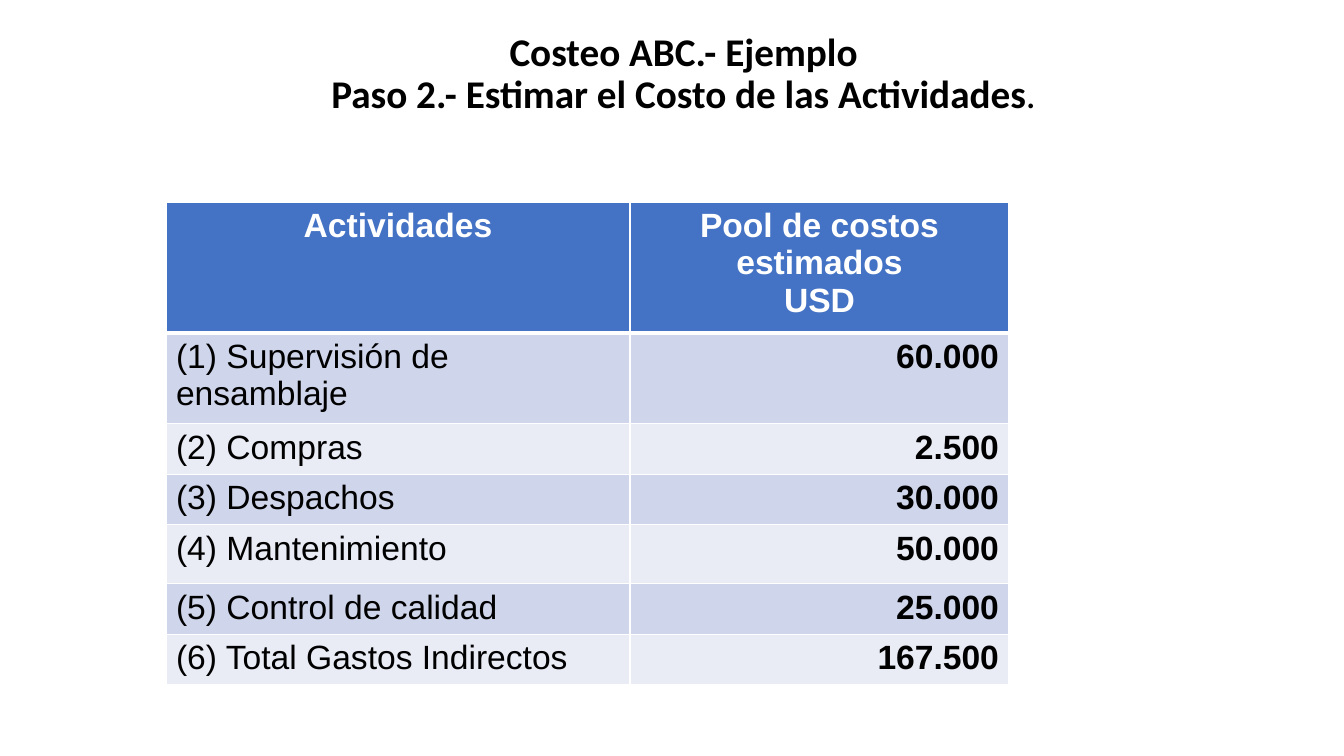
from lxml import etree
from pptx import Presentation
from pptx.dml.color import RGBColor
from pptx.enum.text import MSO_ANCHOR, PP_ALIGN
from pptx.oxml.ns import qn
from pptx.util import Emu, Pt

CENTER, LEFT, RIGHT = PP_ALIGN.CENTER, PP_ALIGN.LEFT, PP_ALIGN.RIGHT
MIDDLE = MSO_ANCHOR.MIDDLE

BLACK = RGBColor(0x00, 0x00, 0x00)
WHITE = RGBColor(0xFF, 0xFF, 0xFF)
HEADER_BLUE = RGBColor(0x44, 0x72, 0xC4)
BANDS = (RGBColor(0xE9, 0xEB, 0xF5), RGBColor(0xCF, 0xD5, 0xEA))

EMU_PER_PX = 914400 / 100.8
THIN, THICK = 1, 3

COLUMN_WIDTHS = (464, 379)
ROW_HEIGHTS = (122, 84, 47, 47, 59, 47, 47)
COSTS = (
    ("Actividades", "Pool de costos estimados\nUSD"),
    ("(1) Supervisión de ensamblaje", "60.000"),
    ("(2) Compras", "2.500"),
    ("(3) Despachos", "30.000"),
    ("(4) Mantenimiento", "50.000"),
    ("(5) Control de calidad", "25.000"),
    ("(6) Total Gastos Indirectos", "167.500"),
)


def px(length):
    return Emu(round(length * EMU_PER_PX))


def style_font(font, name, size, color, bold):
    font.name = name
    font.size = Pt(size)
    font.color.rgb = color
    font.bold = bold


def add_title(slide):
    frame = slide.shapes.add_textbox(px(104), px(23), px(1159), px(104)).text_frame
    frame.word_wrap = True
    frame.vertical_anchor = MIDDLE
    title = frame.paragraphs[0]
    title.alignment = CENTER
    title.line_spacing = 0.9
    style_font(title.font, "Calibri", 28, BLACK, True)
    title.add_run().text = "Costeo ABC.- Ejemplo"
    title.add_line_break()
    title.add_run().text = "Paso 2.- Estimar el Costo de las Actividades"
    period = title.add_run()
    period.text = "."
    period.font.bold = False


def set_borders(cell, top, bottom):
    """Draw white cell borders; must run before the cell gets its fill."""
    properties = cell._tc.get_or_add_tcPr()
    for side, width in (("L", THIN), ("R", THIN), ("T", top), ("B", bottom)):
        line = etree.SubElement(properties, qn(f"a:ln{side}"), w=str(Pt(width)))
        fill = etree.SubElement(line, qn("a:solidFill"))
        etree.SubElement(fill, qn("a:srgbClr"), val=str(WHITE))


def fill_cell(cell, text, row, column):
    is_header = row == 0
    set_borders(cell, THICK if row == 1 else THIN, THICK if is_header else THIN)
    cell.fill.solid()
    cell.fill.fore_color.rgb = HEADER_BLUE if is_header else BANDS[row % 2]
    cell.text = text
    for paragraph in cell.text_frame.paragraphs:
        paragraph.alignment = CENTER if is_header else (LEFT, RIGHT)[column]
        style_font(paragraph.font, "Arial", 24, WHITE if is_header else BLACK,
                   is_header or column == 1)


def add_cost_table(slide):
    table = slide.shapes.add_table(
        len(ROW_HEIGHTS), len(COLUMN_WIDTHS), px(166), px(202),
        px(sum(COLUMN_WIDTHS)), px(sum(ROW_HEIGHTS))).table
    for column, width in zip(table.columns, COLUMN_WIDTHS):
        column.width = px(width)
    for row, height in zip(table.rows, ROW_HEIGHTS):
        row.height = px(height)
    for row, texts in enumerate(COSTS):
        for column, text in enumerate(texts):
            fill_cell(table.cell(row, column), text, row, column)


def main():
    presentation = Presentation()
    presentation.slide_width = px(1344)
    presentation.slide_height = px(756)
    slide = presentation.slides.add_slide(presentation.slide_layouts[6])
    add_title(slide)
    add_cost_table(slide)
    presentation.save("out.pptx")


if __name__ == "__main__":
    main()
